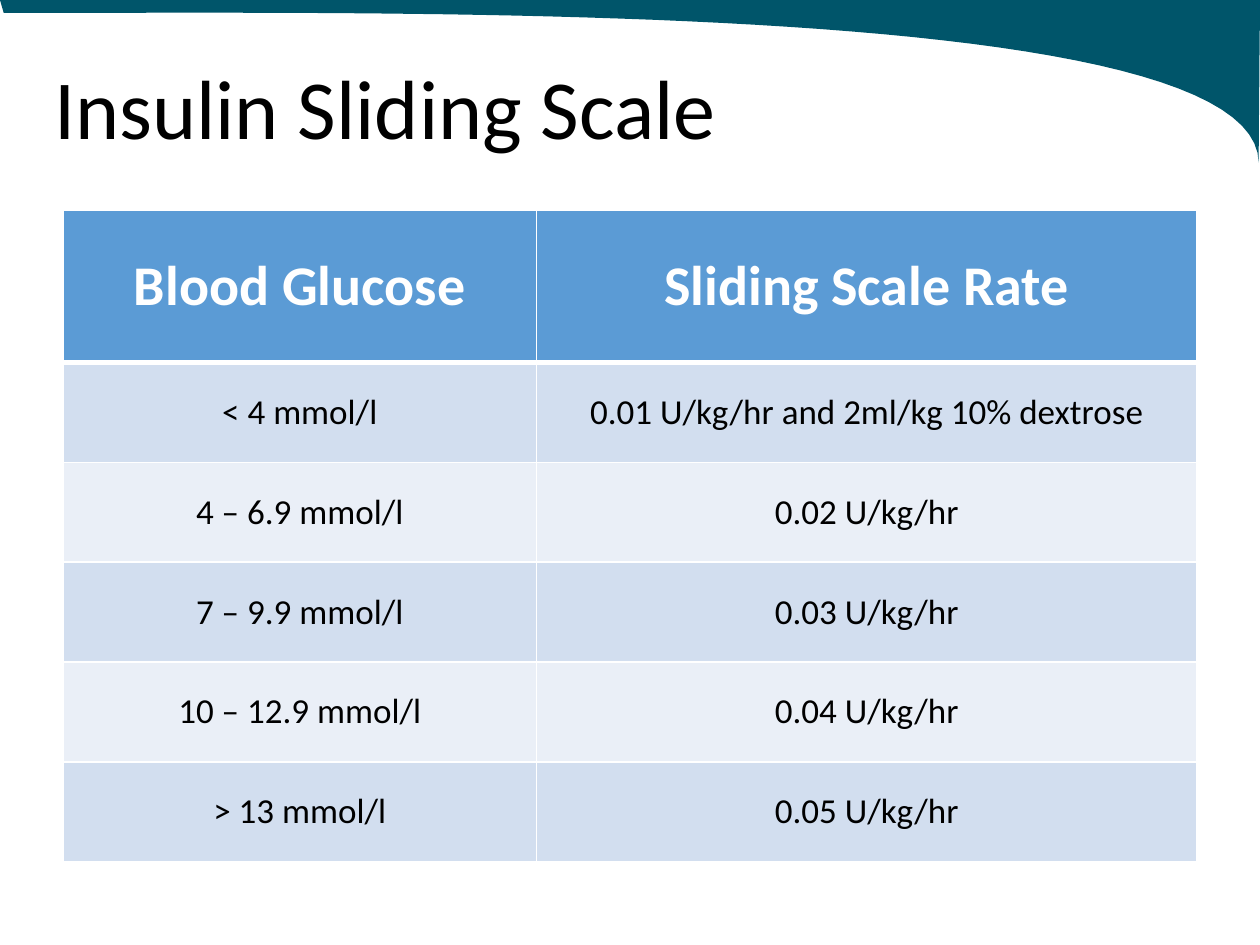
import dataclasses

import lxml.etree
import pptx
import pptx.dml.color
import pptx.enum.text
import pptx.oxml.ns
import pptx.util

Cm = pptx.util.Cm
Pt = pptx.util.Pt


@dataclasses.dataclass(frozen=True)
class Theme:
    """Colours and type sizes of the slide."""
    font: str = "Calibri"
    ink: str = "000000"
    paper: str = "FFFFFF"
    swoosh: str = "00556A"
    header: str = "5B9BD5"
    bands: tuple = ("D2DEEF", "EAEFF7")
    title_size: int = 48
    header_size: int = 32
    body_size: int = 20
    thin_rule: int = 1
    thick_rule: int = 3


@dataclasses.dataclass(frozen=True)
class Box:
    """A region of the slide in centimetres."""
    left: float
    top: float
    width: float
    height: float


THEME = Theme()
RATES = [
    ("Blood Glucose", "Sliding Scale Rate"),
    ("< 4 mmol/l", "0.01 U/kg/hr and 2ml/kg 10% dextrose"),
    ("4 – 6.9 mmol/l", "0.02 U/kg/hr"),
    ("7 – 9.9 mmol/l", "0.03 U/kg/hr"),
    ("10 – 12.9 mmol/l", "0.04 U/kg/hr"),
    ("> 13 mmol/l", "0.05 U/kg/hr"),
]


def rgb(colour):
    """Turn a hex string into a colour."""
    return pptx.dml.color.RGBColor.from_string(colour)


def add_run(paragraph, text, size, colour, bold=False):
    """Add one formatted run to a paragraph."""
    run = paragraph.add_run()
    run.text = text
    run.font.name = THEME.font
    run.font.size = Pt(size)
    run.font.bold = bold
    run.font.color.rgb = rgb(colour)


def bezier(start, pull_start, pull_end, end, steps=48):
    """Return points along a cubic curve, leaving out its start."""
    points = []
    for step in range(1, steps + 1):
        t = step / steps
        weights = ((1 - t) ** 3, 3 * t * (1 - t) ** 2, 3 * t * t * (1 - t), t ** 3)
        corners = (start, pull_start, pull_end, end)
        points.append(tuple(sum(w * c[axis] for w, c in zip(weights, corners))
                            for axis in (0, 1)))
    return points


def add_swoosh(slide, box):
    """Draw the curved band across the top, behind everything else."""
    corner, tip, tail = (1, 0), (0.999, 1), (0.003, 0.08)
    outline = [corner]
    outline += bezier(corner, (1, 0.11), (0.999, 0.89), tip, steps=8)
    outline += bezier(tip, (0.998, 0), (0.336, 0.08), tail)
    builder = slide.shapes.build_freeform(Cm(box.left), Cm(box.top))
    builder.add_line_segments(
        [(Cm(box.left + x * box.width), Cm(box.top + y * box.height)) for x, y in outline])
    swoosh = builder.convert_to_shape()
    swoosh.shadow.inherit = False
    swoosh.fill.solid()
    swoosh.fill.fore_color.rgb = rgb(THEME.swoosh)
    swoosh.line.fill.background()
    slide.shapes._spTree.insert(2, swoosh._element)


def add_title(slide, box, text):
    """Place the title placeholder in its box and fill it."""
    title = slide.shapes.title
    title.left, title.top = Cm(box.left), Cm(box.top)
    title.width, title.height = Cm(box.width), Cm(box.height)
    frame = title.text_frame
    frame.auto_size = pptx.enum.text.MSO_AUTO_SIZE.NONE
    frame.vertical_anchor = pptx.enum.text.MSO_ANCHOR.MIDDLE
    heading = frame.paragraphs[0]
    heading.alignment = pptx.enum.text.PP_ALIGN.LEFT
    heading.line_spacing = 0.9
    add_run(heading, text, THEME.title_size, THEME.ink)


def add_rule(cell, side, width):
    """Give one side of a cell a border."""
    qn = pptx.oxml.ns.qn
    rule = lxml.etree.SubElement(cell._tc.get_or_add_tcPr(), qn(f"a:ln{side}"), w=str(Pt(width)))
    fill = lxml.etree.SubElement(rule, qn("a:solidFill"))
    lxml.etree.SubElement(fill, qn("a:srgbClr"), val=THEME.paper)


def fill_cell(cell, text, row):
    """Write and format one cell according to its row."""
    is_header = row == 0
    thick_side = {0: "B", 1: "T"}.get(row)
    for side in "LRTB":
        add_rule(cell, side, THEME.thick_rule if side == thick_side else THEME.thin_rule)
    cell.fill.solid()
    cell.fill.fore_color.rgb = rgb(THEME.header if is_header else THEME.bands[(row - 1) % 2])
    cell.vertical_anchor = pptx.enum.text.MSO_ANCHOR.MIDDLE
    entry = cell.text_frame.paragraphs[0]
    entry.alignment = pptx.enum.text.PP_ALIGN.CENTER
    if is_header:
        add_run(entry, text, THEME.header_size, THEME.paper, bold=True)
    else:
        add_run(entry, text, THEME.body_size, THEME.ink)


def add_rate_table(slide, box, rates):
    """Fill the box with a tall header row and equal rows of rates."""
    header_height, glucose_width = 3.07, 9.55
    row_height = (box.height - header_height) / (len(rates) - 1)
    table = slide.shapes.add_table(len(rates), 2, Cm(box.left), Cm(box.top),
                                   Cm(box.width), Cm(box.height)).table
    table.columns[0].width = Cm(glucose_width)
    table.columns[1].width = Cm(box.width - glucose_width)
    for row, entries in enumerate(rates):
        table.rows[row].height = Cm(row_height if row else header_height)
        for column, text in enumerate(entries):
            fill_cell(table.cell(row, column), text, row)


def main():
    """Build and save the slide."""
    deck = pptx.Presentation()
    deck.slide_width, deck.slide_height = Cm(25.4), Cm(19.05)
    slide = deck.slides.add_slide(deck.slide_layouts.get_by_name("Title Only"))
    add_swoosh(slide, Box(0, 0, 25.4, 3.28))
    add_title(slide, Box(0.84, 0.43, 21.89, 3.68), "Insulin Sliding Scale")
    add_rate_table(slide, Box(1.27, 4.24, 22.86, 13.13), RATES)
    deck.save("out.pptx")


if __name__ == "__main__":
    main()
